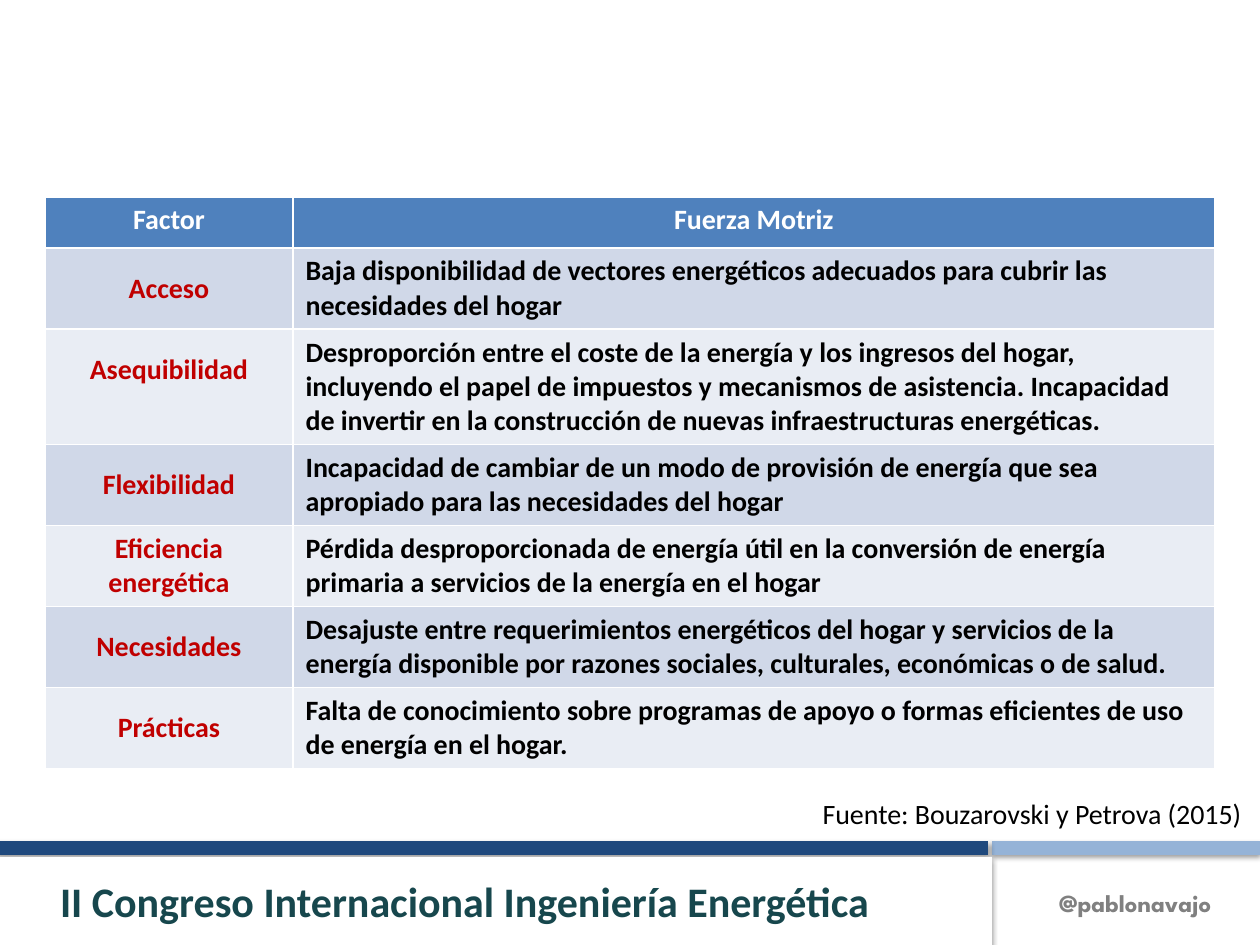
from lxml import etree
from pptx import Presentation
from pptx.dml.color import RGBColor
from pptx.enum.shapes import MSO_CONNECTOR, MSO_SHAPE
from pptx.enum.text import MSO_ANCHOR as Anchor, PP_ALIGN as Align
from pptx.oxml import parse_xml
from pptx.oxml.ns import nsdecls, qn
from pptx.util import Pt

COLORS = {
    "white": "FFFFFF", "black": "000000", "header": "4F81BD", "factor": "C00000",
    "band_dark": "D0D8E8", "band_light": "E9EDF4", "navy": "1F497D",
    "sky": "95B3D7", "teal": "17474D", "gray": "808080",
}
HEADER = ("Factor", "Fuerza Motriz")
FACTORS = [
    ("Acceso", "Baja disponibilidad de vectores energéticos adecuados para cubrir las necesidades del hogar"),
    ("Asequibilidad", "Desproporción entre el coste de la energía y los ingresos del hogar, incluyendo el papel de impuestos y mecanismos de asistencia. Incapacidad de invertir en la construcción de nuevas infraestructuras energéticas."),
    ("Flexibilidad", "Incapacidad de cambiar de un modo de provisión de energía que sea apropiado para las necesidades del hogar"),
    ("Eficiencia energética", "Pérdida desproporcionada de energía útil en la conversión de energía primaria a servicios de la energía en el hogar"),
    ("Necesidades", "Desajuste entre requerimientos energéticos del hogar y servicios de la energía disponible por razones sociales, culturales, económicas o de salud."),
    ("Prácticas", "Falta de conocimiento sobre programas de apoyo o formas eficientes de uso de energía en el hogar."),
]
COLUMN_WIDTHS = (248, 922)
ROW_HEIGHTS = (51, 80, 113, 80, 80, 80, 80)
TABLE_LEFT, TABLE_TOP = 45, 197
RAISED_FACTOR, RAISED_MARGIN = "Asequibilidad", 40

RULE_Y = 848
RULES = [(992, 1260, "sky"), (-4, 988, "navy")]
BANNER = ("II Congreso Internacional Ingeniería Energética", (0, 857, 992, 88))
TEXT_BOXES = [
    ("@pablonavajo", (1022, 882, 202, 43), dict(size=14, name="League Spartan", color="gray", bold=True)),
    ("Fuente: Bouzarovski y Petrova (2015)", (178, 790, 1076, 46), dict(size=16, color="black")),
]


def px(length):
    return round(length * 914400 / 126)


def rgb(name):
    return RGBColor.from_string(COLORS[name])


def write(frame, text, align, color, size=16, name="Calibri", bold=False):
    paragraph = frame.paragraphs[0]
    paragraph.alignment = align
    run = paragraph.add_run()
    run.text = text
    for attribute, value in dict(size=Pt(size), name=name, bold=bold).items():
        setattr(run.font, attribute, value)
    run.font.color.rgb = rgb(color)


def add_shadow(shape, opacity, distance):
    shape._element.spPr.append(parse_xml(
        f'<a:effectLst {nsdecls("a")}><a:outerShdw blurRad="{Pt(3.1)}" dist="{Pt(distance)}" '
        f'dir="5400000" rotWithShape="0"><a:srgbClr val="{COLORS["black"]}">'
        f'<a:alpha val="{opacity * 1000}"/></a:srgbClr></a:outerShdw></a:effectLst>'))


def add_borders(cell):
    properties = cell._tc.get_or_add_tcPr()
    for index, side in enumerate("LRTB"):
        line = etree.Element(qn(f"a:ln{side}"), w=str(Pt(1)))
        fill = etree.SubElement(line, qn("a:solidFill"))
        etree.SubElement(fill, qn("a:srgbClr"), val=COLORS["white"])
        properties.insert(index, line)


def add_rules(slide):
    for start, end, color in RULES:
        rule = slide.shapes.add_connector(
            MSO_CONNECTOR.STRAIGHT, px(start), px(RULE_Y), px(end), px(RULE_Y))
        rule.line.color.rgb = rgb(color)
        rule.line.width = Pt(7.75)
        add_shadow(rule, 38, 1.6)


def add_banner(slide):
    text, box = BANNER
    banner = slide.shapes.add_shape(MSO_SHAPE.RECTANGLE, *map(px, box))
    banner.fill.solid()
    banner.fill.fore_color.rgb = rgb("white")
    banner.line.fill.background()
    add_shadow(banner, 35, 1.8)
    frame = banner.text_frame
    frame.margin_left = px(60)
    frame.vertical_anchor = Anchor.MIDDLE
    write(frame, text, Align.LEFT, "teal", size=24, bold=True)


def add_factor_table(slide):
    rows = [HEADER, *FACTORS]
    table = slide.shapes.add_table(
        len(rows), len(HEADER), px(TABLE_LEFT), px(TABLE_TOP),
        px(sum(COLUMN_WIDTHS)), px(sum(ROW_HEIGHTS))).table
    for column, width in zip(table.columns, COLUMN_WIDTHS):
        column.width = px(width)
    for r, (texts, height) in enumerate(zip(rows, ROW_HEIGHTS)):
        table.rows[r].height = px(height)
        fill = "header" if r == 0 else ("band_light", "band_dark")[r % 2]
        for c, text in enumerate(texts):
            cell = table.cell(r, c)
            cell.fill.solid()
            cell.fill.fore_color.rgb = rgb(fill)
            add_borders(cell)
            cell.vertical_anchor = Anchor.MIDDLE if r and c == 0 else Anchor.TOP
            if text == RAISED_FACTOR:
                cell.margin_bottom = px(RAISED_MARGIN)
            color = "white" if r == 0 else ("factor", "black")[c]
            align = Align.LEFT if r and c else Align.CENTER
            write(cell.text_frame, text, align, color, bold=True)


def add_text_boxes(slide):
    for text, box, font in TEXT_BOXES:
        frame = slide.shapes.add_textbox(*map(px, box)).text_frame
        frame.word_wrap = True
        write(frame, text, Align.RIGHT, **font)


def main():
    presentation = Presentation()
    presentation.slide_width, presentation.slide_height = px(1260), px(945)
    slide = presentation.slides.add_slide(presentation.slide_layouts[6])
    add_rules(slide)
    add_banner(slide)
    add_factor_table(slide)
    add_text_boxes(slide)
    presentation.save("out.pptx")


if __name__ == "__main__":
    main()
